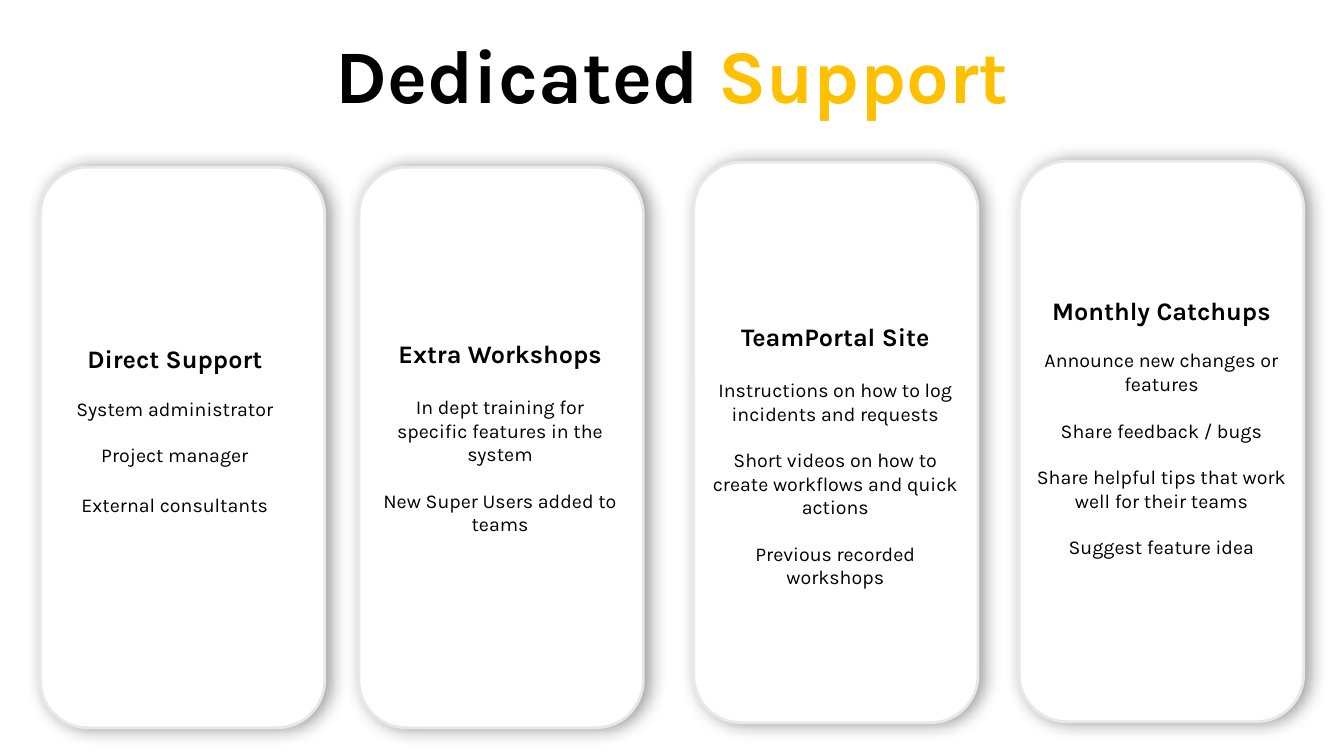
from dataclasses import dataclass

from lxml import etree
from pptx import Presentation
from pptx import util as u
from pptx.dml.color import RGBColor
from pptx.enum import shapes, text
from pptx.oxml.ns import qn


@dataclass(frozen=True)
class Theme:
    font: str = "Karla"
    ink: str = "000000"
    accent: str = "FFC000"
    card: str = "FFFFFF"
    border: str = "E8E8E8"
    title_size: int = 54
    heading_size: int = 18
    body_size: int = 14
    gap: float = 16.4
    wide_gap: float = 18.7


THEME = Theme()
CARD_WIDTH, CARD_HEIGHT = 2.82, 5.56

# Each card: left and top; text box; heading; (space before, line) pairs.
CARDS = [
    ((0.4, 1.66), (0.45, 3.36, 2.57, 2.15), "Direct Support", [
        (THEME.gap, "System administrator"),
        (THEME.gap, "Project manager"),
        (THEME.wide_gap, "External consultants")]),
    ((3.56, 1.66), (3.69, 3.31, 2.54, 2.12), "Extra Workshops", [
        (THEME.wide_gap, "In dept training for specific features in the system"),
        (THEME.gap, "New Super Users added to teams")]),
    ((6.88, 1.61), (6.91, 3.14, 2.75, 2.59), "TeamPortal Site", [
        (THEME.wide_gap, "Instructions on how to log incidents and requests"),
        (THEME.gap, "Short videos on how to create workflows and quick actions"),
        (THEME.gap, "Previous recorded workshops")]),
    ((10.11, 1.6), (10.11, 2.88, 2.82, 3.03), "Monthly Catchups", [
        (THEME.gap, "Announce new changes or features"),
        (THEME.gap, "Share feedback / bugs"),
        (THEME.gap, "Share helpful tips that work well for their teams"),
        (THEME.gap, "Suggest feature idea")]),
]


def inches(*lengths):
    return [u.Inches(length) for length in lengths]


def style(font, size, bold=False, color=THEME.ink):
    font.name = THEME.font
    font.size = u.Pt(size)
    font.bold = bold
    font.color.rgb = RGBColor.from_string(color)


def add_soft_shadow(shape):
    shape.shadow.inherit = False
    effects = shape._element.spPr.find(qn("a:effectLst"))
    shadow = etree.SubElement(effects, qn("a:outerShdw"), blurRad=str(u.Pt(13)),
                              dist=str(u.Pt(3)), dir="0", algn="l", rotWithShape="0")
    color = etree.SubElement(shadow, qn("a:srgbClr"), val=THEME.ink)
    etree.SubElement(color, qn("a:alpha"), val="40000")


def add_card(slide, left, top):
    card = slide.shapes.add_shape(shapes.MSO_SHAPE.ROUNDED_RECTANGLE,
                                  *inches(left, top, CARD_WIDTH, CARD_HEIGHT))
    card.fill.solid()
    card.fill.fore_color.rgb = RGBColor.from_string(THEME.card)
    card.line.color.rgb = RGBColor.from_string(THEME.border)
    card.line.width = u.Pt(2)
    add_soft_shadow(card)


def add_card_text(slide, box, heading, lines):
    frame = slide.shapes.add_textbox(*inches(*box)).text_frame
    frame.word_wrap = True
    frame.auto_size = text.MSO_AUTO_SIZE.SHAPE_TO_FIT_TEXT
    title = frame.paragraphs[0]
    title.text = heading
    title.alignment = text.PP_ALIGN.CENTER
    style(title.font, THEME.heading_size, bold=True)
    for space, line in lines:
        paragraph = frame.add_paragraph()
        paragraph.text = line
        paragraph.alignment = text.PP_ALIGN.CENTER
        paragraph.space_before = u.Pt(space)
        style(paragraph.font, THEME.body_size)


def set_title(slide, parts):
    title = slide.shapes.title
    title.left, title.top, title.width, title.height = inches(0, 0.28, 13.33, 0.96)
    frame = title.text_frame
    frame.auto_size = text.MSO_AUTO_SIZE.NONE
    frame.vertical_anchor = text.MSO_ANCHOR.BOTTOM
    paragraph = frame.paragraphs[0]
    paragraph.alignment = text.PP_ALIGN.CENTER
    paragraph.line_spacing = 0.9
    for words, color in parts:
        run = paragraph.add_run()
        run.text = words
        style(run.font, THEME.title_size, bold=True, color=color)


def main():
    deck = Presentation()
    deck.slide_width, deck.slide_height = inches(13.33, 7.5)
    slide = deck.slides.add_slide(deck.slide_layouts.get_by_name("Title Only"))
    set_title(slide, [("Dedicated ", THEME.ink), ("Support", THEME.accent)])
    for corner, box, heading, lines in CARDS:
        add_card(slide, *corner)
        add_card_text(slide, box, heading, lines)
    deck.save("out.pptx")


if __name__ == "__main__":
    main()
